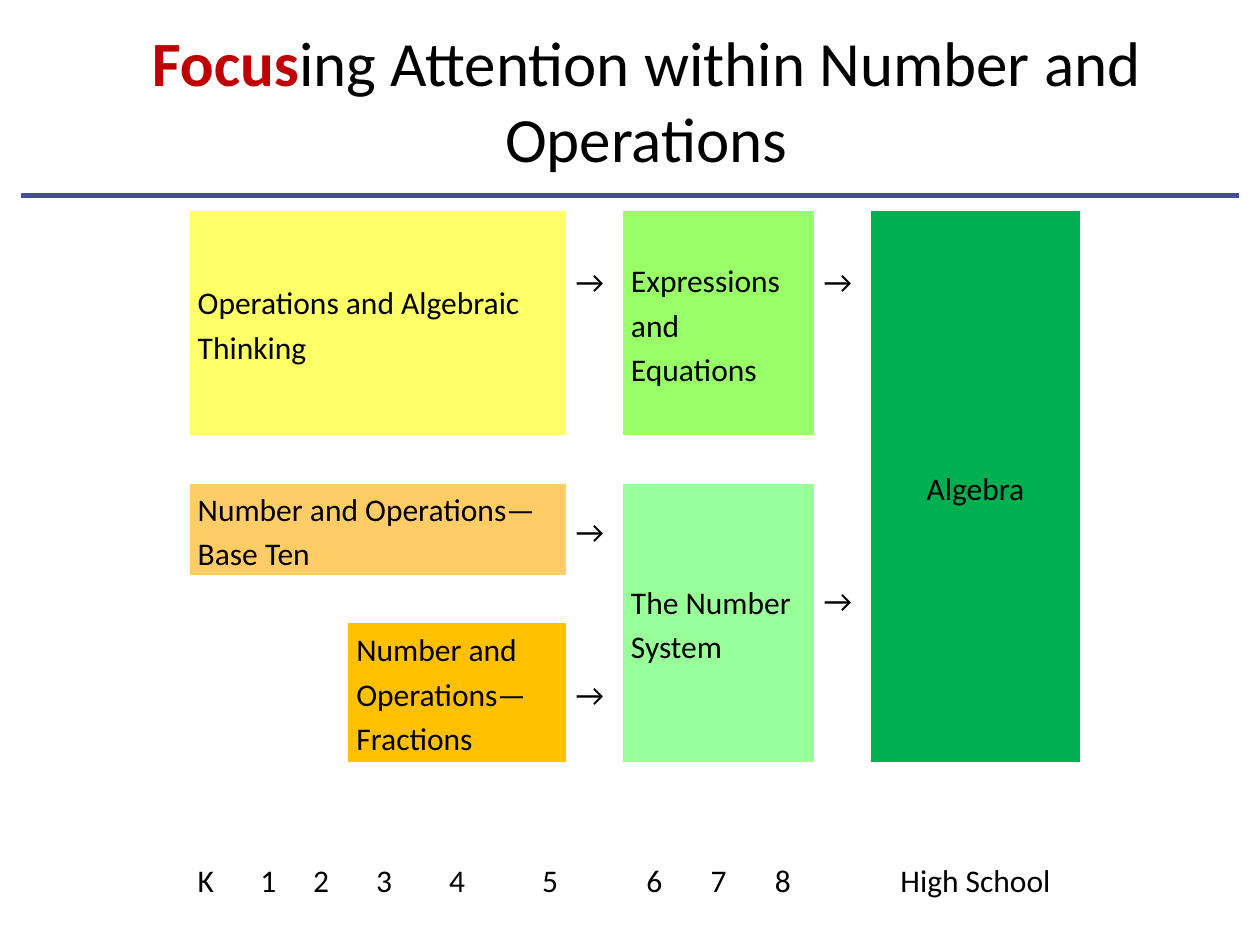
from dataclasses import dataclass

from lxml import etree
from pptx import Presentation
from pptx import util as u
from pptx.dml.color import RGBColor
from pptx.enum import shapes, text
from pptx.oxml.ns import qn


@dataclass(frozen=True)
class Theme:
    font: str = "Calibri"
    head: int = 36
    body: int = 18
    ink: str = "000000"
    red: str = "C00000"
    rule: str = "424E9B"


THEME = Theme()
LEFT, MID, RIGHT = text.PP_ALIGN.LEFT, text.PP_ALIGN.CENTER, text.PP_ALIGN.RIGHT

COLS = [0.42] * 4 + [0.58] * 3 + [0.44] + [0.51] * 3 + [0.44, 1.67]
ROWS = [0.37] * 4 + [0.74, 0.37, 1.11] + [0.37] * 3

BLOCKS = [
    (0, 1, 3, 6, "Operations and Algebraic Thinking", "FFFF66", LEFT),
    (0, 8, 3, 3, "Expressions and Equations", "99FF66", LEFT),
    (0, 12, 7, 1, "Algebra", "00B050", MID),
    (4, 1, 1, 6, "Number and Operations—Base Ten", "FFCC66", LEFT),
    (4, 8, 3, 3, "The Number System", "99FF99", LEFT),
    (6, 4, 1, 3, "Number and Operations—Fractions", "FFC000", LEFT),
]
ARROWS = [(1, 7), (1, 11), (4, 7), (5, 11), (6, 7)]
GRADES = [(1, "K", LEFT), (5, "4", MID), (6, "5", RIGHT), (12, "High School", MID)]
GRADES += [(col, str(col - 1), MID) for col in (2, 3, 4)]
GRADES += [(col, str(col - 2), MID) for col in (8, 9, 10)]


def add_run(para, words, size, color, bold=False):
    run = para.add_run()
    run.text = words
    run.font.name = THEME.font
    run.font.size = u.Pt(size)
    run.font.bold = bold
    run.font.color.rgb = RGBColor.from_string(color)


def add_title(slide):
    title = slide.shapes.title
    title.left, title.top = u.Inches(0.67), u.Inches(0.25)
    title.width, title.height = u.Inches(8.92), u.Inches(1.08)
    frame = title.text_frame
    frame.auto_size = text.MSO_AUTO_SIZE.NONE
    frame.vertical_anchor = text.MSO_ANCHOR.MIDDLE
    para = frame.paragraphs[0]
    para.alignment = MID
    add_run(para, "Focus", THEME.head, THEME.red, True)
    add_run(para, "ing Attention within Number and Operations", THEME.head, THEME.ink)


def add_rule(slide):
    y = u.Inches(1.55)
    rule = slide.shapes.add_connector(
        shapes.MSO_CONNECTOR.STRAIGHT, u.Inches(0.17), y, u.Inches(9.83), y
    )
    rule.line.width = u.Pt(3)
    rule.line.color.rgb = RGBColor.from_string(THEME.rule)
    etree.SubElement(rule._element.spPr, qn("a:effectLst"))


def add_grid(slide):
    frame = slide.shapes.add_table(
        len(ROWS), len(COLS), u.Inches(1.08), u.Inches(1.67),
        u.Inches(sum(COLS)), u.Inches(sum(ROWS)),
    )
    grid = frame.table
    grid.first_row = grid.horz_banding = False
    for col, width in zip(grid.columns, COLS):
        col.width = u.Inches(width)
    for row, height in zip(grid.rows, ROWS):
        row.height = u.Inches(height)
    for cell in grid.iter_cells():
        cell.fill.background()
        cell.margin_left = cell.margin_right = u.Inches(0.07)
        cell.margin_top = cell.margin_bottom = 0
        cell.vertical_anchor = text.MSO_ANCHOR.MIDDLE
    return grid


def put_text(cell, words, align=LEFT):
    para = cell.text_frame.paragraphs[0]
    para.alignment = align
    para.line_spacing = 1.15
    add_run(para, words, THEME.body, THEME.ink)


def put_block(grid, row, col, high, wide, words, color, align):
    cell = grid.cell(row, col)
    if high * wide > 1:
        cell.merge(grid.cell(row + high - 1, col + wide - 1))
    cell.fill.solid()
    cell.fill.fore_color.rgb = RGBColor.from_string(color)
    put_text(cell, words, align)


def main():
    deck = Presentation()
    deck.slide_width, deck.slide_height = u.Inches(10), u.Inches(7.5)
    slide = deck.slides.add_slide(deck.slide_layouts[5])
    add_rule(slide)
    add_title(slide)
    grid = add_grid(slide)
    for block in BLOCKS:
        put_block(grid, *block)
    for row, col in ARROWS:
        put_text(grid.cell(row, col), "→")
    for col, words, align in GRADES:
        put_text(grid.cell(len(ROWS) - 1, col), words, align)
    deck.save("out.pptx")


if __name__ == "__main__":
    main()
